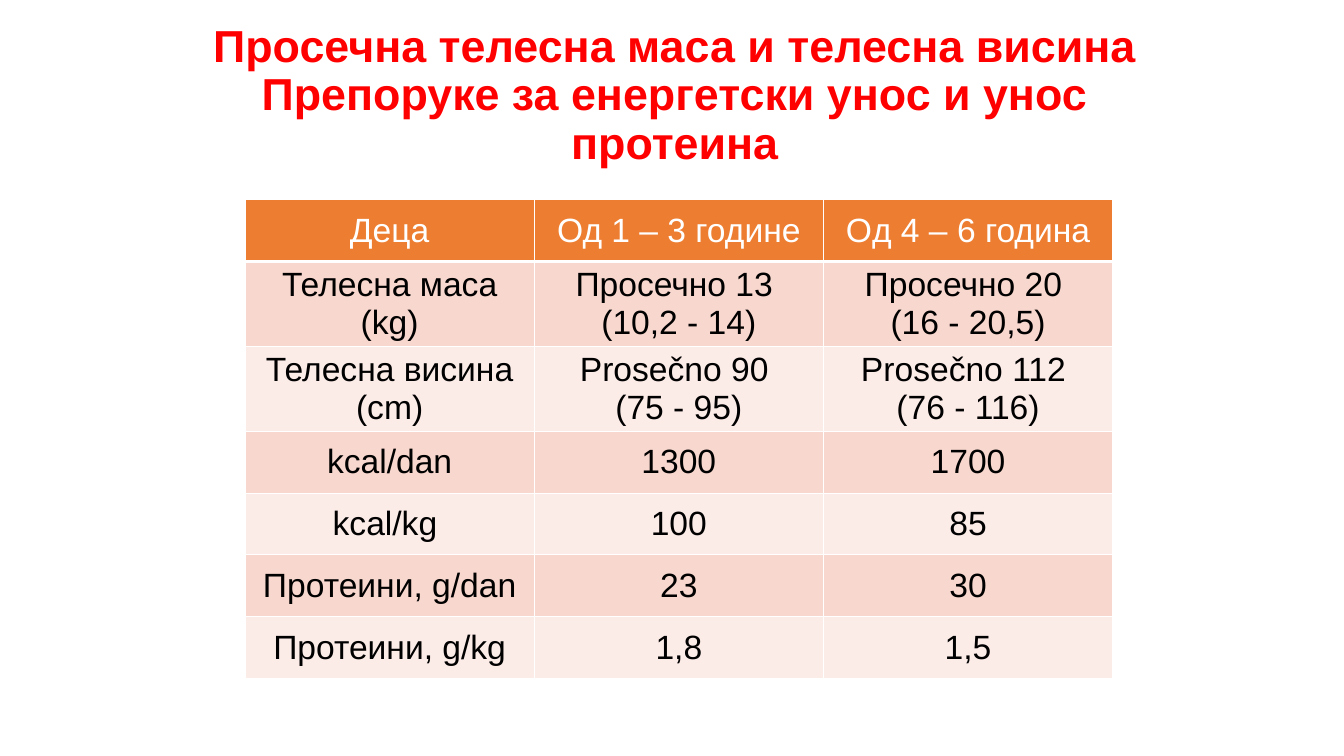
"""Build a slide with a table of body size, energy and protein advice for children."""
from lxml import etree
from pptx import Presentation
from pptx.dml.color import RGBColor
from pptx.enum import text
from pptx.oxml.ns import qn
from pptx.util import Pt

RED = RGBColor(0xFF, 0x00, 0x00)
WHITE = RGBColor(0xFF, 0xFF, 0xFF)
BLACK = RGBColor(0x00, 0x00, 0x00)
ORANGE = RGBColor(0xED, 0x7D, 0x31)
BANDS = [RGBColor(0xFC, 0xEC, 0xE8), RGBColor(0xF8, 0xD7, 0xCE)]

TITLE = "Просечна телесна маса и телесна висина\vПрепоруке за енергетски унос и унос протеина"
ROWS = [
    ("Деца", "Од 1 – 3 године", "Oд 4 – 6 година"),
    ("Телесна маса (kg)", "Просечно 13 \n(10,2 - 14)", "Просечно 20 \n(16 - 20,5)"),
    ("Телесна висина\n(cm)", "Prosečno 90 \n(75 - 95)", "Prosečno 112 \n(76 - 116)"),
    ("kcal/dan", "1300", "1700"),
    ("kcal/kg ", "100", "85"),
    ("Протеини, g/dan", "23", "30"),
    ("Протеини, g/kg", "1,8", "1,5"),
]
HEIGHTS = [44.1, 50.4, 50.4, 44.1, 44.1, 44.1, 44.1]
COL_WIDTH = 206.6


def format_text(tf, color, values):
    for p in tf.paragraphs:
        p.alignment = text.PP_ALIGN.CENTER
        for r in p.runs:
            r.font.color.rgb = color
            for name, value in values.items():
                setattr(r.font, name, value)


def add_border(cell, side, width):
    ln = etree.SubElement(cell._tc.get_or_add_tcPr(), qn(f"a:ln{side}"), w=str(Pt(width)))
    fill = etree.SubElement(ln, qn("a:solidFill"))
    etree.SubElement(fill, qn("a:srgbClr"), val=str(WHITE))


prs = Presentation()
prs.slide_width, prs.slide_height = Pt(960), Pt(540)
s = prs.slides.add_slide(prs.slide_layouts[5])

title = s.shapes.title
box = {"left": Pt(134.6), "top": Pt(19.4), "width": Pt(694.8), "height": Pt(98.6)}
for name, value in box.items():
    setattr(title, name, value)
tf = title.text_frame
tf.text = TITLE
tf.word_wrap = True
tf.auto_size = text.MSO_AUTO_SIZE.NONE
tf.vertical_anchor = text.MSO_ANCHOR.MIDDLE
tf.paragraphs[0].line_spacing = 0.9
format_text(tf, RED, {"name": "Arial", "size": Pt(32), "bold": True})
for br in tf.paragraphs[0]._p.findall(qn("a:br")):
    etree.SubElement(br, qn("a:rPr"), sz="3200", b="1")

frame = s.shapes.add_table(len(ROWS), len(ROWS[0]), Pt(175), Pt(142.6),
                           Pt(COL_WIDTH * len(ROWS[0])), Pt(sum(HEIGHTS)))
table = frame.table
for col in table.columns:
    col.width = Pt(COL_WIDTH)
for i, (values, height) in enumerate(zip(ROWS, HEIGHTS)):
    table.rows[i].height = Pt(height)
    for j, value in enumerate(values):
        cell = table.cell(i, j)
        cell.text = value
        cell.vertical_anchor = text.MSO_ANCHOR.MIDDLE
        format_text(cell.text_frame, BLACK if i else WHITE,
                    {"name": "Arial", "size": Pt(24), "bold": False})
        for side in "LRTB":
            header_edge = (i, side) in ((0, "B"), (1, "T"))
            add_border(cell, side, 3 if header_edge else 1)
        cell.fill.solid()
        cell.fill.fore_color.rgb = BANDS[i % 2] if i else ORANGE

prs.save("out.pptx")
